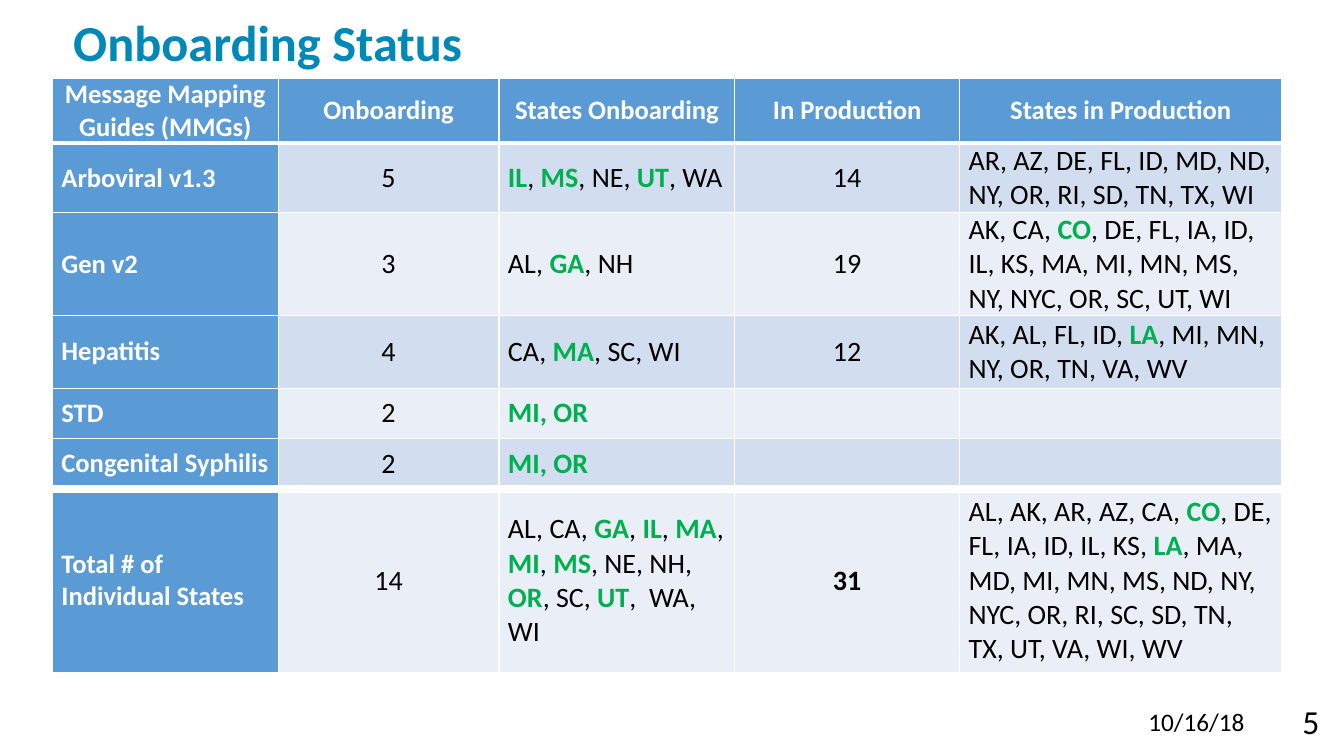
from dataclasses import dataclass

from lxml import etree
from pptx import Presentation
from pptx import util as u
from pptx.dml.color import RGBColor
from pptx.enum import text as t
from pptx.oxml.ns import qn

WIDE, HIGH = u.Inches(13.33), u.Inches(7.5)
FONT = "Calibri"
WHITE, BLACK, GREEN = "FFFFFF", "000000", "00B050"
HEAD, TITLE = "5B9BD5", "0088B7"
BANDS = ("D2DEEF", "EAEFF7")
LEFT, MID, RIGHT = t.PP_ALIGN.LEFT, t.PP_ALIGN.CENTER, t.PP_ALIGN.RIGHT
THIN, BOLD, HEAVY = 1, 3, 6  # border widths in points


@dataclass
class Box:
    """A place given as shares of the slide's size."""
    x: float
    y: float
    w: float
    h: float

    def frame(self) -> tuple[int, int, int, int]:
        return (int(self.x * WIDE), int(self.y * HIGH),
                int(self.w * WIDE), int(self.h * HIGH))


@dataclass
class Row:
    """A table row; states between asterisks are green."""
    cells: tuple[str, ...]
    high: float  # weight among the rows
    line: int = THIN  # border below


@dataclass
class Note:
    text: str
    box: Box
    size: int
    align: t.PP_ALIGN


GRID = Box(0.039, 0.104, 0.915, 0.775)
COLS = (2.24, 2.19, 2.34, 2.23, 3.2)
ROWS = [
    Row(("Message Mapping Guides (MMGs)", "Onboarding", "States Onboarding",
         "In Production", "States in Production"), 0.61, BOLD),
    Row(("Arboviral v1.3", "5", "*IL*, *MS*, NE, *UT*, WA", "14",
         "AR, AZ, DE, FL, ID, MD, ND, NY, OR, RI, SD, TN, TX, WI"), 0.69),
    Row(("Gen v2", "3", "AL, *GA*, NH", "19",
         "AK, CA, *CO*, DE, FL, IA, ID, IL, KS, MA, MI, MN, MS, "
         "NY, NYC, OR, SC, UT, WI"), 0.96),
    Row(("Hepatitis", "4", "CA, *MA*, SC, WI", "12",
         "AK, AL, FL, ID, *LA*, MI, MN, NY, OR, TN, VA, WV"), 0.72),
    Row(("STD", "2", "*MI, OR*", "", ""), 0.5),
    Row(("Congenital Syphilis", "2", "*MI, OR*", "", ""), 0.5, HEAVY),
    Row(("Total # of Individual States", "14",
         "AL, CA, *GA*, *IL*, *MA*, *MI*, *MS*, NE, NH, *OR*, SC, *UT*,  WA, WI",
         "31",
         "AL, AK, AR, AZ, CA, *CO*, DE, FL, IA, ID, IL, KS, *LA*, MA, MD, MI, "
         "MN, MS, ND, NY, NYC, OR, RI, SC, SD, TN, TX, UT, VA, WI, WV"), 1.82),
]
TOTAL = (len(ROWS) - 1, 3)  # the one bold figure
NOTES = [
    Note("5", Box(0.894, 0.921, 0.095, 0.067), 24, RIGHT),
    Note("10/16/18", Box(0.847, 0.928, 0.092, 0.053), 18, LEFT),
]


def tint(code: str) -> RGBColor:
    return RGBColor.from_string(code)


def style(font, size: float, code: str, bold: bool = False) -> None:
    font.name, font.size, font.bold = FONT, u.Pt(size), bold
    font.color.rgb = tint(code)


def edge(cell, top: int, low: int) -> None:
    """Draw white borders; they must come before the fill."""
    props = cell._tc.get_or_add_tcPr()
    for side, wide in zip("LRTB", (THIN, THIN, top, low)):
        line = etree.SubElement(props, qn(f"a:ln{side}"), w=str(u.Pt(wide)))
        fill = etree.SubElement(line, qn("a:solidFill"))
        etree.SubElement(fill, qn("a:srgbClr"), val=WHITE)


def write(cell, words: str, row: int, col: int) -> None:
    para = cell.text_frame.paragraphs[0]
    lead = row == 0 or col == 0
    para.alignment = MID if row == 0 or col in (1, 3) else LEFT
    if lead:
        style(para.font, 19, WHITE, True)
    else:
        style(para.font, 20, BLACK, (row, col) == TOTAL)
    # Every second part lies between asterisks
    for num, part in enumerate(words.split("*")):
        if part:
            run = para.add_run()
            run.text = part
            if num % 2:
                run.font.bold = True
                run.font.color.rgb = tint(GREEN)


def add_grid(slide) -> None:
    x, y, w, h = GRID.frame()
    table = slide.shapes.add_table(len(ROWS), len(COLS), x, y, w, h).table
    table.first_row = table.horz_banding = False
    for col, part in zip(table.columns, COLS):
        col.width = int(w * part / sum(COLS))
    for r, row in enumerate(ROWS):
        table.rows[r].height = u.Inches(row.high)
        top = ROWS[r - 1].line if r else THIN
        for c, words in enumerate(row.cells):
            cell = table.cell(r, c)
            cell.margin_left = cell.margin_right = u.Inches(0.09)
            cell.margin_top = cell.margin_bottom = 0
            cell.vertical_anchor = t.MSO_ANCHOR.MIDDLE
            edge(cell, top, row.line)
            cell.fill.solid()
            shade = HEAD if r == 0 or c == 0 else BANDS[(r - 1) % 2]
            cell.fill.fore_color.rgb = tint(shade)
            write(cell, words, r, c)


def add_title(slide, words: str, box: Box) -> None:
    head = slide.shapes.title
    head.left, head.top, head.width, head.height = box.frame()
    body = head.text_frame
    body.text = words
    body.auto_size = t.MSO_AUTO_SIZE.NONE
    body.vertical_anchor = t.MSO_ANCHOR.BOTTOM
    para = body.paragraphs[0]
    para.alignment, para.line_spacing = LEFT, u.Pt(40)
    style(para.font, 36, TITLE, True)


def add_note(slide, note: Note) -> None:
    body = slide.shapes.add_textbox(*note.box.frame()).text_frame
    body.word_wrap = True
    body.auto_size = t.MSO_AUTO_SIZE.SHAPE_TO_FIT_TEXT
    para = body.paragraphs[0]
    para.text, para.alignment = note.text, note.align
    style(para.font, note.size, BLACK)


def main() -> None:
    deck = Presentation()
    deck.slide_width, deck.slide_height = WIDE, HIGH
    slide = deck.slides.add_slide(deck.slide_layouts[5])  # title only
    add_title(slide, "Onboarding Status", Box(0.047, 0.007, 0.9, 0.095))
    add_grid(slide)
    for note in NOTES:
        add_note(slide, note)
    deck.save("out.pptx")


if __name__ == "__main__":
    main()
